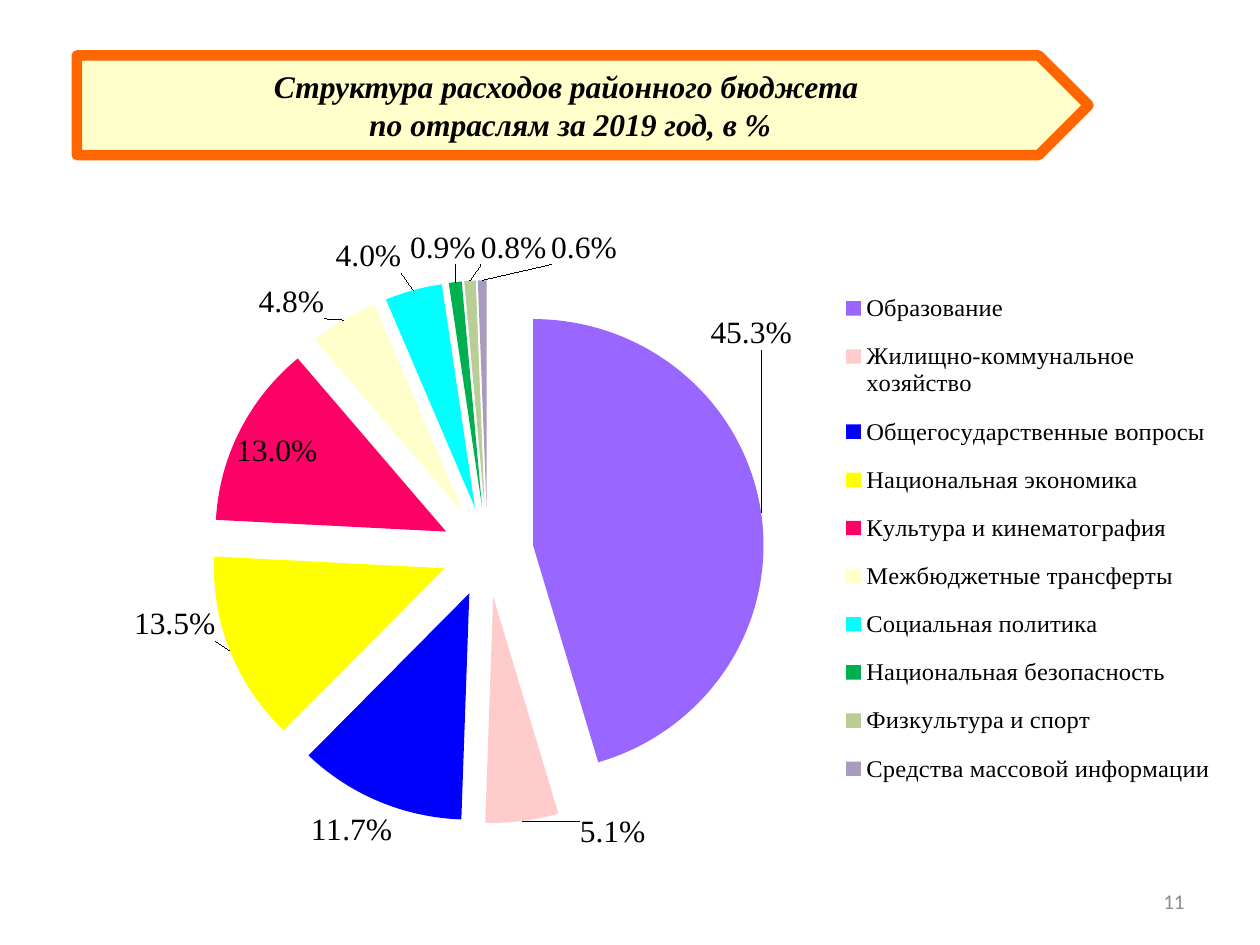
import dataclasses

import lxml.etree
import pptx
import pptx.chart.data
import pptx.dml.color
import pptx.enum.chart
import pptx.enum.shapes
import pptx.enum.text
import pptx.oxml.ns
import pptx.util

Inches = pptx.util.Inches
CHART_BOX = (0.87, 1.55, 8.82, 5.29)
PLOT_LAYOUT = (0.02, 0.13, 0.64, 0.83)
LEGEND_LAYOUT = (0.66, 0.12, 0.34, 0.81)
EXPLOSION = 20


@dataclasses.dataclass(frozen=True)
class Sector:
    name: str
    share: float
    color: str
    label_shift: tuple


SECTORS = [
    Sector("Образование", 0.453, "9966FF", (-0.46, -1.31)),
    Sector("Жилищно-коммунальное хозяйство", 0.051, "FFCCCC", (0.45, -0.1)),
    Sector("Общегосударственные вопросы", 0.117, "0000FF", (0.13, 0.04)),
    Sector("Национальная экономика", 0.135, "FFFF00", (-0.06, -0.37)),
    Sector("Культура и кинематография", 0.13, "FF0066", (0.67, 0.33)),
    Sector("Межбюджетные трансферты", 0.048, "FFFFCC", (-0.12, 0.04)),
    Sector("Социальная политика", 0.04, "00FFFF", (-0.08, -0.08)),
    Sector("Национальная безопасность", 0.009, "00B050", (0.17, -0.08)),
    Sector("Физкультура и спорт", 0.008, "B9CD96", (0.35, -0.07)),
    Sector("Средства массовой информации", 0.006, "A99BBD", (0.81, -0.07)),
]


@dataclasses.dataclass(frozen=True)
class Theme:
    text: str = "000000"
    muted: str = "8C8C8C"
    banner_fill: str = "FFFFCC"
    banner_line: str = "FF6600"
    serif: str = "Times New Roman"
    sans: str = "Calibri"
    title_size: int = 18
    label_size: int = 18
    legend_size: int = 14
    number_size: int = 12
    banner_width: int = 6


def rgb(value):
    return pptx.dml.color.RGBColor.from_string(value)


def style_font(font, name, size, color):
    font.name = name
    font.size = pptx.util.Pt(size)
    font.color.rgb = rgb(color)


def manual_layout(**settings):
    qn = pptx.oxml.ns.qn
    layout = lxml.etree.Element(qn("c:layout"))
    manual = lxml.etree.SubElement(layout, qn("c:manualLayout"))
    for name, value in settings.items():
        lxml.etree.SubElement(manual, qn(f"c:{name}")).set("val", str(value))
    return layout


def area_layout(x, y, w, h, **target):
    return manual_layout(**target, xMode="edge", yMode="edge", x=x, y=y, w=w, h=h)


class SlideBuilder:
    """Adds styled elements to the current slide."""

    def __init__(self, slide, theme):
        self.slide = slide
        self.theme = theme

    def add_lines(self, frame, lines, alignment, name, size, color, emphasis=None):
        frame.word_wrap = True
        frame.vertical_anchor = pptx.enum.text.MSO_ANCHOR.MIDDLE
        for index, line in enumerate(lines):
            paragraph = frame.add_paragraph() if index else frame.paragraphs[0]
            paragraph.alignment = alignment
            run = paragraph.add_run()
            run.text = line
            style_font(run.font, name, size, color)
            run.font.bold = run.font.italic = emphasis

    def banner(self, box, lines):
        theme = self.theme
        shape = self.slide.shapes.add_shape(
            pptx.enum.shapes.MSO_SHAPE.PENTAGON, *map(Inches, box))
        shape.shadow.inherit = False
        shape.fill.solid()
        shape.fill.fore_color.rgb = rgb(theme.banner_fill)
        shape.line.color.rgb = rgb(theme.banner_line)
        shape.line.width = pptx.util.Pt(theme.banner_width)
        self.add_lines(shape.text_frame, lines, pptx.enum.text.PP_ALIGN.CENTER,
                       theme.serif, theme.title_size, theme.text, True)

    def page_number(self, box, number):
        shape = self.slide.shapes.add_textbox(*map(Inches, box))
        self.add_lines(shape.text_frame, [number], pptx.enum.text.PP_ALIGN.RIGHT,
                       self.theme.sans, self.theme.number_size, self.theme.muted)

    def pie(self, box, sectors):
        theme = self.theme
        data = pptx.chart.data.CategoryChartData(number_format="0.0%")
        data.categories = [sector.name for sector in sectors]
        data.add_series("Series 1", [sector.share for sector in sectors])
        chart = self.slide.shapes.add_chart(
            pptx.enum.chart.XL_CHART_TYPE.PIE, *map(Inches, box), data).chart
        chart.has_title = False
        style_font(chart.font, theme.serif, theme.label_size, theme.text)
        self.legend(chart)
        chart.plots[0].vary_by_categories = True
        series = chart.plots[0].series[0]
        labels = series.data_labels
        labels.show_value = True
        labels.number_format = "0.0%"
        labels.number_format_is_linked = False
        style_font(labels.font, theme.serif, theme.label_size, theme.text)
        for index, sector in enumerate(sectors):
            point = series.points[index]
            point.format.fill.solid()
            point.format.fill.fore_color.rgb = rgb(sector.color)
            point.format.line.fill.background()
            label = point.data_label
            label.position = pptx.enum.chart.XL_LABEL_POSITION.OUTSIDE_END
            style_font(label.font, theme.serif, theme.label_size, theme.text)
        for element, sector in zip(series._element.xpath(".//c:dLbl"), sectors):
            shift_x, shift_y = sector.label_shift
            element.insert(1, manual_layout(x=shift_x / box[2], y=shift_y / box[3]))
        explosion = lxml.etree.Element(pptx.oxml.ns.qn("c:explosion"))
        explosion.set("val", str(EXPLOSION))
        series._element.xpath("c:dPt")[0].addprevious(explosion)
        plot_area = chart._chartSpace.xpath(".//c:plotArea")[0]
        for old in plot_area.xpath("c:layout"):
            plot_area.remove(old)
        plot_area.insert(0, area_layout(*PLOT_LAYOUT, layoutTarget="inner"))

    def legend(self, chart):
        chart.has_legend = True
        legend = chart.legend
        legend.position = pptx.enum.chart.XL_LEGEND_POSITION.RIGHT
        legend.include_in_layout = False
        style_font(legend.font, self.theme.serif, self.theme.legend_size, self.theme.text)
        element = legend._element
        for old in element.xpath("c:layout"):
            element.remove(old)
        element.xpath("c:legendPos")[0].addnext(area_layout(*LEGEND_LAYOUT))


def main():
    presentation = pptx.Presentation()
    presentation.slide_width = Inches(10)
    presentation.slide_height = Inches(7.5)
    slide = presentation.slides.add_slide(presentation.slide_layouts[6])
    builder = SlideBuilder(slide, Theme())
    builder.banner((0.61, 0.44, 8.03, 0.79),
                   ["Структура расходов районного бюджета ", "по отраслям за 2019 год, в %"])
    builder.page_number((7.17, 6.95, 2.33, 0.4), "11")
    builder.pie(CHART_BOX, SECTORS)
    presentation.save("out.pptx")


if __name__ == "__main__":
    main()
